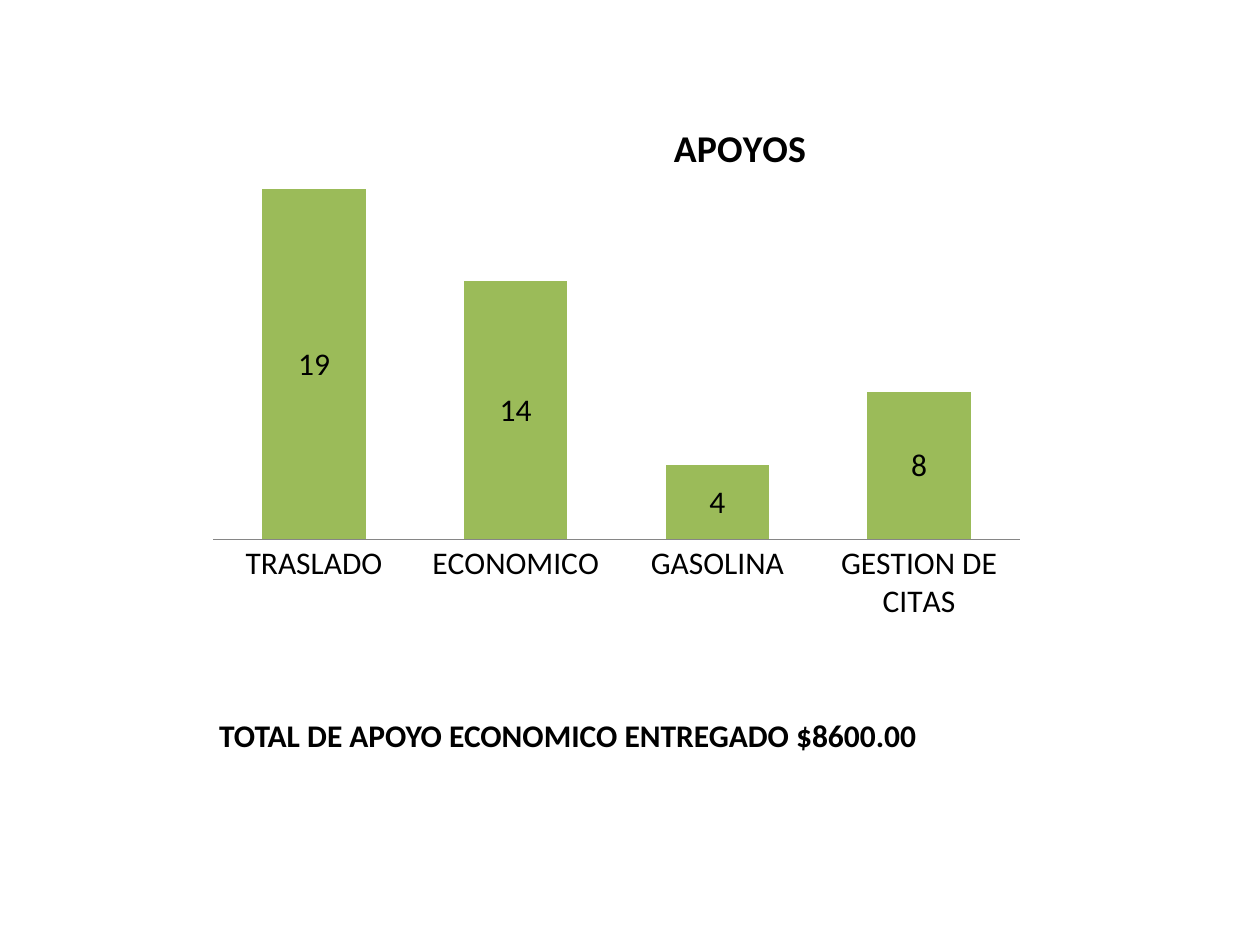
from typing import NamedTuple

from pptx import Presentation
from pptx.chart.data import CategoryChartData
from pptx.dml.color import RGBColor
from pptx.enum.chart import XL_CHART_TYPE, XL_LABEL_POSITION, XL_TICK_MARK
from pptx.enum.text import MSO_AUTO_SIZE
from pptx.oxml import parse_xml
from pptx.oxml.ns import nsdecls, qn
from pptx.util import Cm, Pt

STACKED = XL_CHART_TYPE.COLUMN_STACKED
CENTER = XL_LABEL_POSITION.CENTER
NO_TICK = XL_TICK_MARK.NONE
GROW = MSO_AUTO_SIZE.SHAPE_TO_FIT_TEXT

FONT = "Calibri"
BLACK = "000000"
GREEN = "9BBB59"
GRAY = "868686"
TITLE = "APOYOS"


class Aid(NamedTuple):
    name: str
    count: int


class Box(NamedTuple):
    left: float
    top: float
    width: float
    height: float

    def cm(self):
        return [Cm(n) for n in self]


AIDS = [
    Aid("TRASLADO", 19),
    Aid("ECONOMICO", 14),
    Aid("GASOLINA", 4),
    Aid("GESTION DE CITAS", 8),
]


def color(code: str) -> RGBColor:
    return RGBColor.from_string(code)


def style(font, size: float = 18, bold: bool = False, ink: str = BLACK) -> None:
    font.name = FONT
    font.size = Pt(size)
    font.bold = bold
    font.color.rgb = color(ink)


def write(frame, text: str, **form) -> None:
    part = frame.paragraphs[0]
    run = part.add_run()
    run.text = text
    style(run.font, **form)


def place(node, index: int, **spots: float) -> None:
    """Give a chart part a manual layout, in fractions of the chart."""
    for old in node.findall(qn("c:layout")):
        node.remove(old)
    target = '<c:layoutTarget val="inner"/>' if "w" in spots else ""
    modes = "".join(f'<c:{k}Mode val="edge"/>' for k in spots if k in "xy")
    vals = "".join(f'<c:{k} val="{v}"/>' for k, v in spots.items())
    node.insert(index, parse_xml(
        f'<c:layout {nsdecls("c")}><c:manualLayout>'
        f"{target}{modes}{vals}</c:manualLayout></c:layout>"))


def draw_chart(slide, box: Box) -> None:
    data = CategoryChartData()
    data.categories = [aid.name for aid in AIDS]
    data.add_series(TITLE, [aid.count for aid in AIDS])
    chart = slide.shapes.add_chart(STACKED, *box.cm(), data).chart
    style(chart.font)
    chart.has_legend = False
    chart.has_title = True
    title = chart.chart_title
    write(title.text_frame, TITLE, size=21.6, bold=True)
    title.include_in_layout = False
    place(title._element, 1, x=0.56, y=0.08)
    place(chart._chartSpace.chart.plotArea, 0, x=0.02, y=0.18, w=0.96, h=0.66)

    base = chart.category_axis
    base.major_tick_mark = NO_TICK
    base.format.line.color.rgb = color(GRAY)
    style(base.tick_labels.font)
    scale = chart.value_axis
    scale.visible = False
    scale.has_major_gridlines = False
    scale.minimum_scale, scale.maximum_scale = 0, 20

    plot = chart.plots[0]
    plot.gap_width, plot.overlap = 95, 100
    plot.vary_by_categories = False
    fill = plot.series[0].format.fill
    fill.solid()
    fill.fore_color.rgb = color(GREEN)
    plot.has_data_labels = True
    labels = plot.data_labels
    labels.show_value = True
    labels.position = CENTER
    style(labels.font)


def draw_text(slide, box: Box, text: str, **form) -> None:
    frame = slide.shapes.add_textbox(*box.cm()).text_frame
    frame.word_wrap = False
    frame.auto_size = GROW
    write(frame, text, **form)


def main() -> None:
    deck = Presentation()
    deck.slide_width, deck.slide_height = Cm(25.4), Cm(19.05)
    slide = deck.slides.add_slide(deck.slide_layouts[6])
    draw_chart(slide, Box(3.96, 1.4, 16.94, 11.28))
    draw_text(slide, Box(4.17, 14.3, 14.71, 1.02),
              "TOTAL DE APOYO ECONOMICO ENTREGADO $8600.00", bold=True)
    deck.save("out.pptx")


if __name__ == "__main__":
    main()
